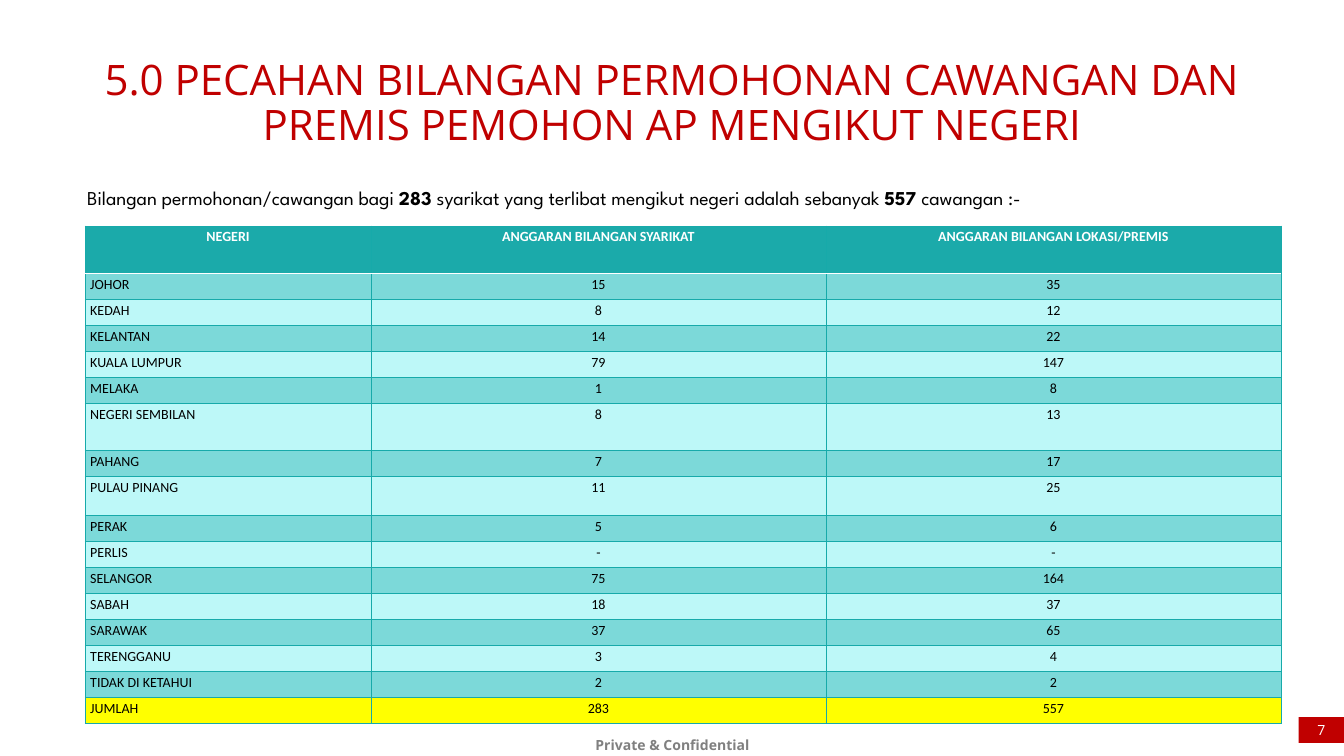
from lxml import etree
from pptx import Presentation
from pptx.dml.color import RGBColor
from pptx.enum.shapes import MSO_SHAPE
from pptx.enum.text import MSO_ANCHOR, MSO_AUTO_SIZE, PP_ALIGN
from pptx.oxml.ns import qn
from pptx.util import Inches, Pt

RECTANGLE = MSO_SHAPE.RECTANGLE
TOP, MIDDLE = MSO_ANCHOR.TOP, MSO_ANCHOR.MIDDLE
NO_AUTOFIT = MSO_AUTO_SIZE.NONE
LEFT, CENTER = PP_ALIGN.LEFT, PP_ALIGN.CENTER

RED = RGBColor(0xC0, 0x00, 0x00)
GREY = RGBColor(0x80, 0x80, 0x80)
BLACK = RGBColor(0x00, 0x00, 0x00)
WHITE = RGBColor(0xFF, 0xFF, 0xFF)
YELLOW = RGBColor(0xFF, 0xFF, 0x00)
TEAL = RGBColor(0x1B, 0xAA, 0xAA)
BORDER = RGBColor(0x17, 0xAA, 0xAA)
BAND_DARK = RGBColor(0x7C, 0xD9, 0xD9)
BAND_LIGHT = RGBColor(0xBD, 0xF8, 0xF8)

HEADER = ("NEGERI", "ANGGARAN BILANGAN SYARIKAT", "ANGGARAN BILANGAN LOKASI/PREMIS")
STATES = [
    ("JOHOR", "15", "35"),
    ("KEDAH", "8", "12"),
    ("KELANTAN", "14", "22"),
    ("KUALA LUMPUR", "79", "147"),
    ("MELAKA", "1", "8"),
    ("NEGERI SEMBILAN", "8", "13"),
    ("PAHANG", "7", "17"),
    ("PULAU PINANG", "11", "25"),
    ("PERAK", "5", "6"),
    ("PERLIS", "-", "-"),
    ("SELANGOR", "75", "164"),
    ("SABAH", "18", "37"),
    ("SARAWAK", "37", "65"),
    ("TERENGGANU", "3", "4"),
    ("TIDAK DI KETAHUI", "2", "2"),
]
TOTAL = ("JUMLAH", "283", "557")
COLUMN_WIDTHS = (5.67, 9.03, 9.03)
TABLE_HEIGHT = 9.88
TALL_ROWS = {"NEGERI": 0.94, "NEGERI SEMBILAN": 0.94, "PULAU PINANG": 0.77}


class SlideBuilder:
    heading_font = "Open Sans"
    body_font = "League Spartan"
    table_font = "Calibri"

    def __init__(self, prs):
        self.s = prs.slides.add_slide(prs.slide_layouts[5])

    def frame(self, sp, margins, anchor=TOP):
        tf = sp.text_frame
        tf.word_wrap = True
        tf.auto_size = NO_AUTOFIT
        tf.vertical_anchor = anchor
        tf.margin_left = tf.margin_right = Inches(margins[0])
        tf.margin_top = tf.margin_bottom = Inches(margins[1])
        return tf

    def add_runs(self, tf, runs, font, size, color, align=LEFT, spacing=None):
        """Fill the first paragraph from (text, bold) pairs."""
        p = tf.paragraphs[0]
        p.alignment = align
        p.line_spacing = spacing
        for text, bold in runs:
            r = p.add_run()
            r.text = text
            r.font.name = font
            r.font.size = Pt(size)
            r.font.bold = bold
            r.font.color.rgb = color

    def title(self, box, text):
        sp = self.s.shapes.title
        sp.left, sp.top, sp.width, sp.height = map(Inches, box)
        tf = self.frame(sp, (0.27, 0.13))
        self.add_runs(tf, [(text, False)], self.heading_font, 60, RED, CENTER, 0.9)

    def text(self, box, runs, margins, font, size, color, align, spacing):
        sp = self.s.shapes.add_textbox(*map(Inches, box))
        tf = self.frame(sp, margins)
        self.add_runs(tf, runs, font, size, color, align, spacing)

    def page_number(self, box, number):
        sp = self.s.shapes.add_shape(RECTANGLE, *map(Inches, box))
        sp.shadow.inherit = False
        sp.fill.solid()
        sp.fill.fore_color.rgb = RED
        sp.line.fill.background()
        tf = self.frame(sp, (0, 0.2), MIDDLE)
        self.add_runs(tf, [(number, False)], self.heading_font, 20, WHITE, CENTER)

    def border(self, cell, side, color, width):
        tcPr = cell._tc.get_or_add_tcPr()
        ln = etree.SubElement(tcPr, qn(f"a:ln{side}"), w=str(Pt(width)))
        fill = etree.SubElement(ln, qn("a:solidFill"))
        etree.SubElement(fill, qn("a:srgbClr"), val=str(color))

    def cell(self, cell, text, fill, color, bold, align, white_side):
        for side in "LRTB":
            if side == white_side:
                self.border(cell, side, WHITE, 2)
            else:
                self.border(cell, side, BORDER, 0.75)
        cell.fill.solid()
        cell.fill.fore_color.rgb = fill
        self.add_runs(cell.text_frame, [(text, bold)], self.table_font, 20, color, align)

    def table(self, left, top):
        rows = [HEADER, *STATES, TOTAL]
        row_height = (TABLE_HEIGHT - sum(TALL_ROWS.values())) / (len(rows) - len(TALL_ROWS))
        table = self.s.shapes.add_table(
            len(rows), len(HEADER), Inches(left), Inches(top),
            Inches(sum(COLUMN_WIDTHS)), Inches(TABLE_HEIGHT)).table
        for column, width in zip(table.columns, COLUMN_WIDTHS):
            column.width = Inches(width)
        for i, values in enumerate(rows):
            table.rows[i].height = Inches(TALL_ROWS.get(values[0], row_height))
            is_header = values is HEADER
            if is_header:
                fill = TEAL
            elif values is TOTAL:
                fill = YELLOW
            else:
                fill = BAND_DARK if i % 2 else BAND_LIGHT
            white_side = {0: "B", 1: "T"}.get(i)
            for j, value in enumerate(values):
                self.cell(table.cell(i, j), value, fill,
                          WHITE if is_header else BLACK, is_header,
                          CENTER if is_header or j else LEFT, white_side)


def main():
    prs = Presentation()
    prs.slide_width, prs.slide_height = Inches(26.67), Inches(15)
    b = SlideBuilder(prs)
    b.text((11.53, 14.42, 3.63, 0.78), [("Private & Confidential", True)],
           (0.24, 0.12), b.heading_font, 20, GREY, CENTER, 1.2)
    b.title((1.53, 1.04, 23.61, 2.29),
            "5.0 PECAHAN BILANGAN PERMOHONAN CAWANGAN DAN PREMIS PEMOHON AP MENGIKUT NEGERI")
    b.page_number((25.77, 14.23, 0.9, 0.51), "7")
    summary = [
        ("Bilangan permohonan/cawangan bagi ", False),
        ("283 ", True),
        ("syarikat yang terlibat mengikut negeri adalah sebanyak ", False),
        ("557 ", True),
        ("cawangan :-", False),
    ]
    b.text((1.46, 3.33, 23.61, 7.24), summary,
           (0.27, 0.13), b.body_font, 28, BLACK, LEFT, 1.5)
    b.table(1.69, 4.48)
    prs.save("out.pptx")


if __name__ == "__main__":
    main()
